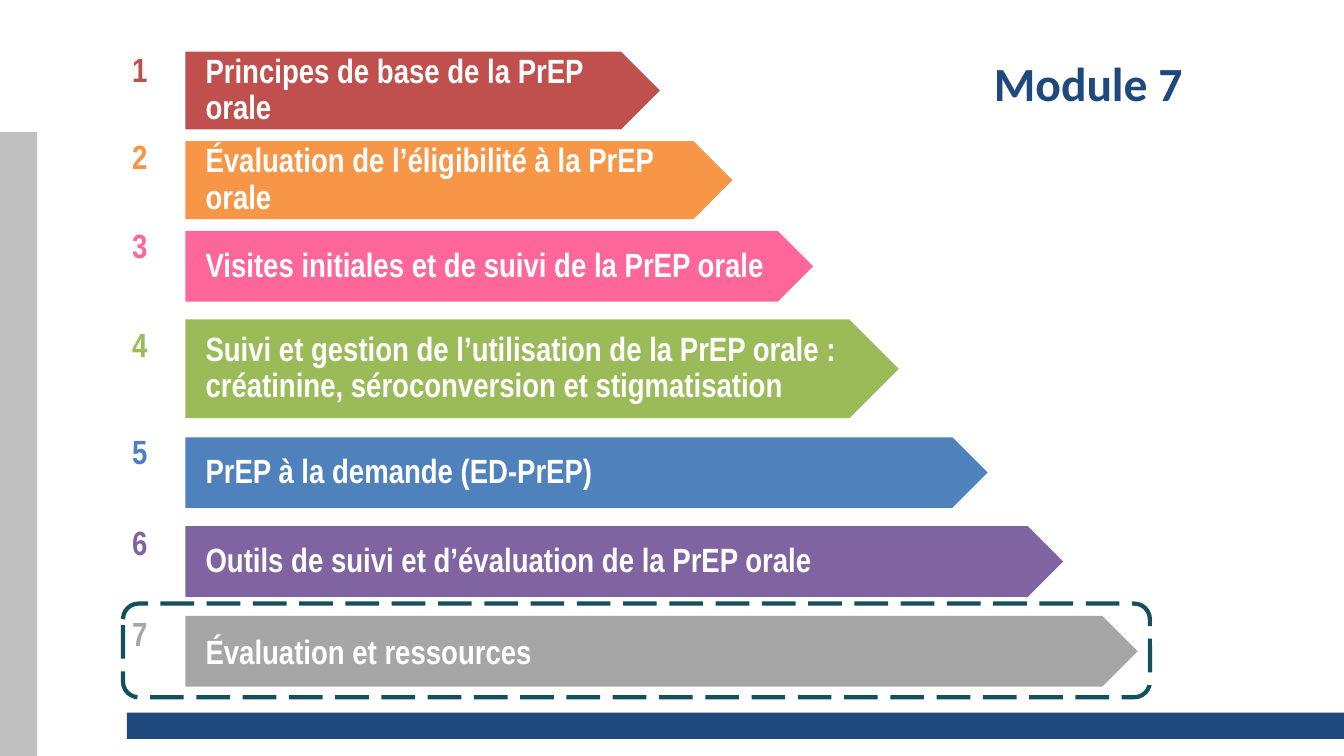
from dataclasses import dataclass

from pptx import Presentation
from pptx import util as u
from pptx.dml.color import RGBColor
from pptx.enum import dml, shapes, text

NARROW = "Arial Narrow"
NAVY, WHITE = "1F497D", "FFFFFF"
KIND = shapes.MSO_SHAPE


@dataclass
class Step:
    label: str
    hue: str
    top: float
    width: float
    height: float
    num_top: float
    lead: float = 0.9


STEPS = [
    Step("Principes de base de la PrEP orale", "C0504D", 1.3, 11.96, 1.96, 1.12),
    Step("Évaluation de l’éligibilité à la PrEP orale", "F79646", 3.56, 13.79, 1.96, 3.3),
    Step("Visites initiales et de suivi de la PrEP orale", "FF6699", 5.82, 15.82, 1.78, 5.54),
    Step("Suivi et gestion de l’utilisation de la PrEP orale : \n"
         "créatinine, séroconversion et stigmatisation", "9BBB59", 8.05, 17.98, 2.49, 8.03),
    Step("PrEP à la demande (ED-PrEP)", "4F81BD", 11.02, 20.22, 1.78, 10.74),
    Step("Outils de suivi et d’évaluation de la PrEP orale", "8064A2", 13.26, 22.12, 1.78, 13.03),
    Step("Évaluation et ressources", "A6A6A6", 15.52, 24, 1.78, 15.32, 1),
]


def color(code: str) -> RGBColor:
    return RGBColor.from_string(code)


def add_block(slide, kind, left: float, top: float, width: float, height: float, hue: str = ""):
    """Add a flat preset shape, unfilled when no hue is given."""
    block = slide.shapes.add_shape(kind, u.Cm(left), u.Cm(top), u.Cm(width), u.Cm(height))
    block.shadow.inherit = False
    if hue:
        block.fill.solid()
        block.fill.fore_color.rgb = color(hue)
        block.line.fill.background()
    else:
        block.fill.background()
    return block


def add_box(slide, left: float, top: float, width: float, height: float):
    return slide.shapes.add_textbox(u.Cm(left), u.Cm(top), u.Cm(width), u.Cm(height))


def write(shape, words: str, hue: str, size: int = 24, font: str = NARROW,
          align=text.PP_ALIGN.LEFT, anchor=text.MSO_ANCHOR.MIDDLE, lead: float = 1) -> None:
    frame = shape.text_frame
    frame.word_wrap = True
    frame.vertical_anchor = anchor
    para = frame.paragraphs[0]
    para.text = words
    para.alignment = align
    para.line_spacing = lead
    for run in para.runs:
        run.font.name = font
        run.font.size = u.Pt(size)
        run.font.bold = True
        run.font.color.rgb = color(hue)


def add_step(slide, num: int, step: Step) -> None:
    bar = add_block(slide, KIND.PENTAGON, 4.67, step.top, step.width, step.height, step.hue)
    bar.text_frame.margin_left = u.Cm(0.51)
    write(bar, step.label, WHITE, lead=step.lead)
    box = add_box(slide, 3.08, step.num_top, 1.3, 1.27)
    write(box, str(num), step.hue, anchor=text.MSO_ANCHOR.TOP)


def main() -> None:
    deck = Presentation()
    deck.slide_width, deck.slide_height = u.Cm(33.87), u.Cm(19.05)
    slide = deck.slides.add_slide(deck.slide_layouts[6])

    # Side and bottom bands
    add_block(slide, KIND.RECTANGLE, 0, 3.33, 0.94, 15.72, "BFBFBF")
    add_block(slide, KIND.RECTANGLE, 3.2, 17.96, 30.67, 0.66, NAVY)

    # Title
    title = add_box(slide, 22.66, 0.89, 9.53, 2.39)
    write(title, "Module 7", NAVY, 34, "Calibri", text.PP_ALIGN.CENTER)

    # Numbered arrows
    for num, step in enumerate(STEPS, 1):
        add_step(slide, num, step)

    # Dashed frame around the current module
    frame = add_block(slide, KIND.ROUNDED_RECTANGLE, 3.1, 15.21, 25.88, 2.36)
    frame.line.color.rgb = color("134F5C")
    frame.line.width = u.Pt(3)
    frame.line.dash_style = dml.MSO_LINE.LONG_DASH

    deck.save("out.pptx")


if __name__ == "__main__":
    main()
